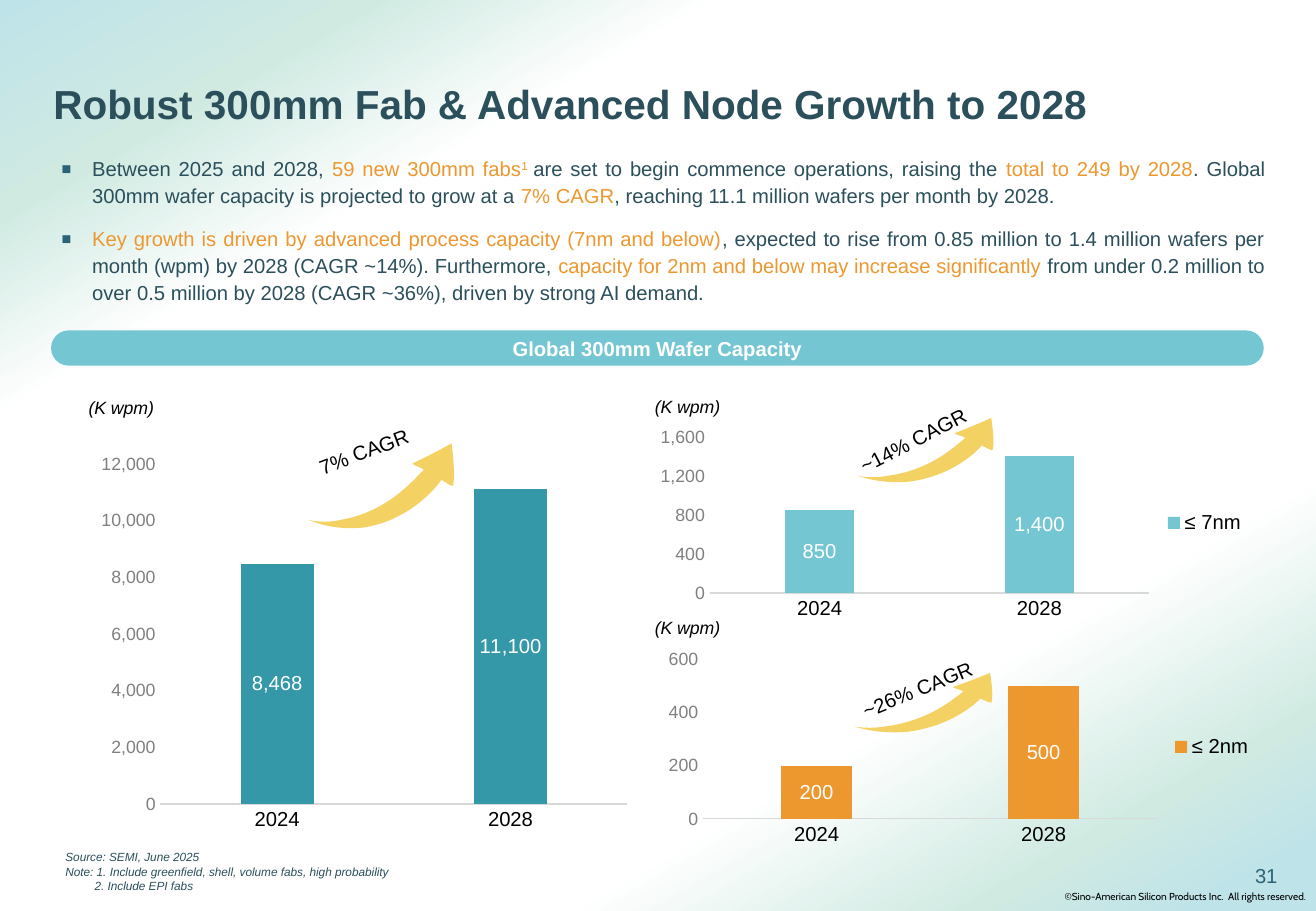
from lxml import etree
from pptx import Presentation
from pptx.chart.data import CategoryChartData
from pptx.dml.color import RGBColor
from pptx.enum.chart import XL_CHART_TYPE, XL_LABEL_POSITION, XL_LEGEND_POSITION, XL_TICK_MARK
from pptx.enum.shapes import MSO_SHAPE
from pptx.enum.text import MSO_ANCHOR, PP_ALIGN
from pptx.oxml import parse_xml
from pptx.oxml.ns import qn
from pptx.util import Inches, Pt

STACKED = XL_CHART_TYPE.COLUMN_STACKED
LABEL_CENTER = XL_LABEL_POSITION.CENTER
LEGEND_RIGHT = XL_LEGEND_POSITION.RIGHT
NO_TICK = XL_TICK_MARK.NONE
MIDDLE = MSO_ANCHOR.MIDDLE
CENTER, JUSTIFY = PP_ALIGN.CENTER, PP_ALIGN.JUSTIFY

INK = RGBColor(0x2B, 0x50, 0x5B)
SLATE = RGBColor(0x2C, 0x63, 0x76)
ORANGE = RGBColor(0xED, 0x97, 0x2F)
AQUA = RGBColor(0x75, 0xC6, 0xD3)
TEAL = RGBColor(0x35, 0x98, 0xA9)
YELLOW = RGBColor(0xF3, 0xD1, 0x63)
GRAY = RGBColor(0x80, 0x80, 0x80)
PALE_GRAY = RGBColor(0xD9, 0xD9, 0xD9)
BLACK = RGBColor(0, 0, 0)
WHITE = RGBColor(0xFF, 0xFF, 0xFF)


def set_font(font, size, color, name="Arial"):
    font.size = Pt(size)
    font.name = name
    font.color.rgb = color


def add_text(left, top, width, height, lines, size, color, wrap=False, name="Arial", italic=False):
    box = page.shapes.add_textbox(Inches(left), Inches(top), Inches(width), Inches(height))
    box.text_frame.word_wrap = wrap
    for index, line in enumerate(lines):
        para = box.text_frame.paragraphs[0] if index == 0 else box.text_frame.add_paragraph()
        for text, tint in line:
            span = para.add_run()
            span.text = text
            set_font(span.font, size, tint or color, name)
            span.font.italic = italic
    return box


deck = Presentation()
deck.slide_width, deck.slide_height = Inches(10.83), Inches(7.5)
page = deck.slides.add_slide(deck.slide_layouts[6])

backdrop = page.shapes.add_shape(MSO_SHAPE.RECTANGLE, 0, 0, deck.slide_width, deck.slide_height)
backdrop.shadow.inherit = False
backdrop.line.fill.background()
backdrop.fill.gradient()
backdrop.fill.gradient_angle = 300
stops = backdrop._element.spPr.find(".//" + qn("a:gsLst"))
for stop in list(stops):
    stops.remove(stop)
for percent, tint in [(0, "BEE3E9"), (13, "D0EAE2"), (25, "FFFFFF"),
                      (74, "FFFFFF"), (88, "D0EAE2"), (96, "BEE3E9")]:
    stop = etree.SubElement(stops, qn("a:gs"), pos=str(percent * 1000))
    etree.SubElement(stop, qn("a:srgbClr"), val=tint)

rights = add_text(8.64, 7.23, 2.19, 0.23,
                  [[("©Sino-American Silicon Products Inc.  All rights reserved.", None)]],
                  6, BLACK, True, name="Cabin")
rights.text_frame.margin_left = Inches(0.12)
rights.text_frame.margin_right = 0
rights.text_frame.paragraphs[0].line_spacing = 1.5
add_text(10.23, 7.06, 0.6, 0.4, [[("31", None)]], 12, SLATE, True)

title = add_text(0.34, 0.45, 9.45, 0.85,
                 [[("Robust 300mm Fab & Advanced Node Growth to 2028", None)]], 24, INK, True)
title.text_frame.vertical_anchor = MIDDLE
title.text_frame.paragraphs[0].line_spacing = 0.9
title.text_frame.paragraphs[0].runs[0].font.bold = True

body = add_text(0.41, 1.22, 10.1, 1.4, [
    [("Between 2025 and 2028, ", None), ("59 new 300mm fabs", ORANGE), ("1 ", ORANGE),
     ("are set to begin commence operations, raising the ", None),
     ("total to 249 by 2028", ORANGE),
     (". Global 300mm wafer capacity is projected to grow at a ", None), ("7% CAGR", ORANGE),
     (", reaching 11.1 million wafers per month by 2028.", None)],
    [("Key growth is driven by advanced process capacity (7nm and below)", ORANGE),
     (", expected to rise from 0.85 million to 1.4 million wafers per month (wpm) by 2028 "
      "(CAGR ~14%). Furthermore, ", None),
     ("capacity for 2nm and below may increase significantly", ORANGE),
     (" from under 0.2 million to over 0.5 million by 2028 (CAGR ~36%), "
      "driven by strong AI demand.", None)],
], 12, INK, True)
for index, para in enumerate(body.text_frame.paragraphs):
    para.alignment = JUSTIFY
    para.line_spacing = 1.1
    para.space_before = Pt(10 * index)
    properties = para._p.get_or_add_pPr()
    properties.set("marL", str(Inches(0.25)))
    properties.set("indent", str(-Inches(0.25)))
    bullet_color = etree.SubElement(properties, qn("a:buClr"))
    etree.SubElement(bullet_color, qn("a:srgbClr"), val="2A6377")
    etree.SubElement(properties, qn("a:buSzPct"), val="80000")
    etree.SubElement(properties, qn("a:buFont"), typeface="Arial")
    etree.SubElement(properties, qn("a:buChar"), char="■")
body.text_frame.paragraphs[0].runs[2].font._element.set("baseline", "30000")

banner = page.shapes.add_shape(MSO_SHAPE.ROUNDED_RECTANGLE, Inches(0.42), Inches(2.72),
                               Inches(9.98), Inches(0.29))
banner.adjustments[0] = 0.5
banner.shadow.inherit = False
banner.fill.solid()
banner.fill.fore_color.rgb = AQUA
banner.line.fill.background()
banner.text_frame.vertical_anchor = MIDDLE
banner.text_frame.paragraphs[0].alignment = CENTER
span = banner.text_frame.paragraphs[0].add_run()
span.text = "Global 300mm Wafer Capacity"
set_font(span.font, 12, WHITE)
span.font.bold = True

CHARTS = [
    ("Series 1", (8468, 11100), TEAL, (0.6, 3.46, 4.68, 3.98), (0.154, 0.09, 0.821, 0.704), 12000, 2000),
    ("≤ 7nm", (850, 1400), AQUA, (5.34, 3.48, 5.01, 1.65), (0.1, 0.071, 0.722, 0.78), 1600, 400),
    ("≤ 2nm", (200, 500), ORANGE, (5.4, 5.31, 5.01, 1.68), (0.077, 0.07, 0.746, 0.782), 600, 200),
]
for name, values, color, frame, plot_area, top_value, step in CHARTS:
    data = CategoryChartData(number_format="#,##0")
    data.categories = ["2024", "2028"]
    data.add_series(name, values)
    chart = page.shapes.add_chart(STACKED, *map(Inches, frame), data).chart
    set_font(chart.font, 10, BLACK)
    chart.has_title = False
    chart.has_legend = name != "Series 1"
    if chart.has_legend:
        chart.legend.position = LEGEND_RIGHT
        chart.legend.include_in_layout = False
        set_font(chart.legend.font, 12, BLACK)

    years, capacity = chart.category_axis, chart.value_axis
    for axis in (years, capacity):
        axis.major_tick_mark = axis.minor_tick_mark = NO_TICK
        axis.has_major_gridlines = False
    set_font(years.tick_labels.font, 12, BLACK)
    years.format.line.color.rgb = PALE_GRAY
    years.format.line.width = Pt(0.75)
    set_font(capacity.tick_labels.font, 10.5, GRAY)
    capacity.tick_labels.number_format = "#,##0"
    capacity.tick_labels.number_format_is_linked = False
    capacity.format.line.fill.background()
    capacity.minimum_scale, capacity.maximum_scale, capacity.major_unit = 0, top_value, step

    plot = chart.plots[0]
    plot.gap_width, plot.overlap, plot.vary_by_categories = 219, 100, False
    plot.series[0].format.fill.solid()
    plot.series[0].format.fill.fore_color.rgb = color
    labels = plot.series[0].data_labels
    labels.show_value = True
    labels.position = LABEL_CENTER
    labels.number_format, labels.number_format_is_linked = "#,##0", False
    set_font(labels.font, 12, WHITE)

    area = chart._chartSpace.chart.plotArea
    for old in area.findall(qn("c:layout")):
        area.remove(old)
    sizes = "".join(f'<c:{key} val="{value}"/>' for key, value in zip("xywh", plot_area))
    area.insert(0, parse_xml(
        '<c:layout xmlns:c="http://schemas.openxmlformats.org/drawingml/2006/chart"><c:manualLayout>'
        '<c:layoutTarget val="inner"/><c:xMode val="edge"/><c:yMode val="edge"/>'
        f'{sizes}</c:manualLayout></c:layout>'))

for left, top in [(0.63, 3.22), (5.29, 3.21), (5.29, 5.03)]:
    add_text(left, top, 1.08, 0.27, [[("(K wpm)", None)]], 10.5, BLACK, True, italic=True)

ARROW_START = (0.38, 0.99)
ARROW_CURVES = [
    ((0.7, 0.9), (0.88, 0.51), (0.91, 0.43)), ((0.95, 0.47), (0.97, 0.5), (0.99, 0.5)),
    ((1, 0.43), (1, 0.26), (0.98, 0)), ((0.87, 0.11), (0.71, 0.24), (0.71, 0.24)),
    ((0.77, 0.3), (0.76, 0.27), (0.79, 0.31)), ((0.72, 0.43), (0.54, 0.81), (0.22, 0.9)),
    ((0.15, 0.93), (0.07, 0.93), (0, 0.9)), ((0.14, 1), (0.27, 1.01), ARROW_START),
]
GROWTH = [
    ((2.54, 3.65, 1.2, 0.7), "7% CAGR", (2.52, 3.56, 0.98, 0.35), 339.3),
    ((7.06, 3.44, 1.12, 0.53), "~14% CAGR", (6.93, 3.47, 1.17, 0.28), 332.7),
    ((7.03, 5.54, 1.14, 0.49), "~26% CAGR", (6.97, 5.52, 1.17, 0.3), 337.6),
]
for (left, top, width, height), rate, frame, turn in GROWTH:
    curves = [[(Inches(left + x * width), Inches(top + y * height)) for x, y in curve]
              for curve in ARROW_CURVES]
    builder = page.shapes.build_freeform(*curves[-1][-1])
    builder.add_line_segments([curve[-1] for curve in curves], close=True)
    arrow = builder.convert_to_shape()
    for segment, curve in zip(arrow._element.findall(".//" + qn("a:lnTo")), curves):
        bend = etree.Element(qn("a:cubicBezTo"))
        for x, y in curve:
            etree.SubElement(bend, qn("a:pt"), x=str(x - arrow.left), y=str(y - arrow.top))
        segment.getparent().replace(segment, bend)
    arrow.shadow.inherit = False
    arrow.fill.solid()
    arrow.fill.fore_color.rgb = YELLOW
    arrow.line.fill.background()
    add_text(*frame, [[(rate, None)]], 12, BLACK).rotation = turn

source = add_text(0.44, 6.95, 2.9, 0.45, [
    [("Source: SEMI, June 2025", None)],
    [("Note: 1. Include greenfield, shell, volume fabs, high probability", None)],
    [("2. Include EPI fabs", None)],
], 7, INK, italic=True)
source.text_frame.paragraphs[2]._p.get_or_add_pPr().set("marL", str(Inches(0.24)))

deck.save("out.pptx")
